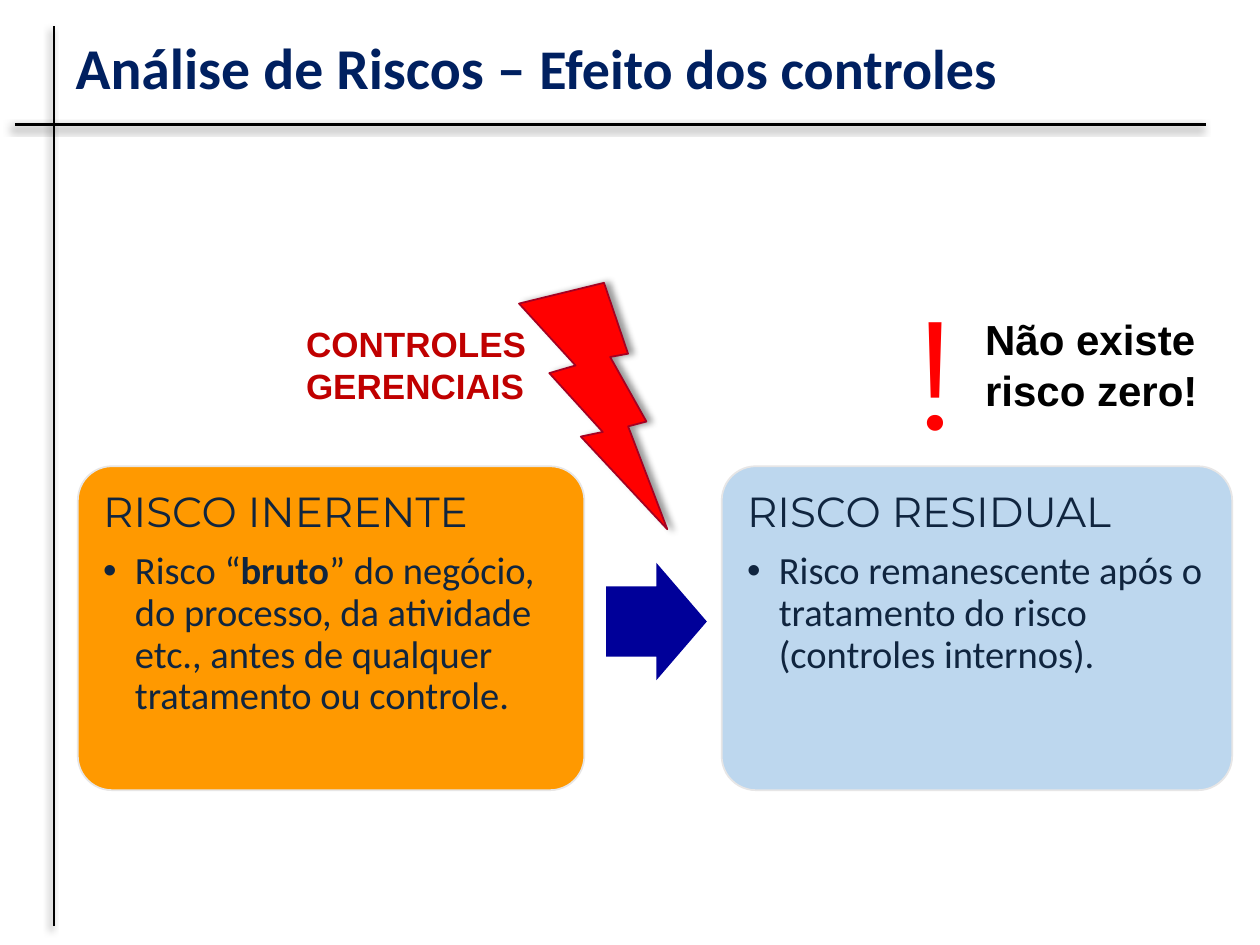
"""Builds the slide on the effect of controls in risk analysis."""
from lxml.etree import SubElement
from pptx import Presentation
from pptx.dml.color import RGBColor
from pptx.enum.shapes import MSO_CONNECTOR, MSO_SHAPE
from pptx.enum.text import MSO_ANCHOR, PP_ALIGN
from pptx.oxml.ns import qn
from pptx.util import Cm, Pt

THEME = {
    "navy": "002060", "ink": "10253F", "black": "000000", "orange": "FF9900",
    "pale": "BDD7EE", "border": "E7E6E6", "arrow": "000099", "red": "FF0000",
    "dark_red": "A50021", "label": "C00000",
    "body": "Calibri", "head": "Montserrat", "note": "Arial",
    "title_size": 33, "subtitle_size": 32, "head_size": 24, "body_size": 22,
    "label_size": 20, "mark_size": 88,
}
TITLE = [("Análise de Riscos – ", "title_size"), ("Efeito dos controles", "subtitle_size")]
RULES = [(1.09, 0.53, 1.09, 18.67), (0.3, 2.51, 24.31, 2.51)]
CARDS = [
    (1.57, 10.21, "orange", "RISCO INERENTE",
     [("Risco “", False), ("bruto", True),
      ("” do negócio, do processo, da atividade etc., antes de qualquer tratamento ou controle.", False)]),
    (14.55, 10.29, "pale", "RISCO RESIDUAL",
     [("Risco remanescente após o tratamento do risco (controles internos).", False)]),
]
CARD_TOP, CARD_HEIGHT, CARD_RADIUS, CARD_INSET = 9.4, 6.53, 0.69, 0.31
NOTES = [
    ((5.92, 6.38, 5.11, 1.96), ["CONTROLES", "GERENCIAIS"], "note", "label_size", "label", True),
    ((18.21, 5.46, 1.83, 4.01), ["!"], "head", "mark_size", "red", False),
    ((19.61, 6.2, 5.79, 2.31), ["Não existe risco zero!"], "note", "head_size", "black", True),
]


def color(name):
    return RGBColor.from_string(THEME[name])


def add_text(p, text, font="body", size="body_size", ink="ink", bold=False):
    r = p.add_run()
    r.text = text
    r.font.name = THEME[font]
    r.font.size = Pt(THEME[size])
    r.font.color.rgb = color(ink)
    r.font.bold = bold


def add_shadow(sp, angle):
    effects = SubElement(sp._element.spPr, qn("a:effectLst"))
    shadow = SubElement(effects, qn("a:outerShdw"), blurRad=str(Pt(4)), dist=str(Pt(3)),
                        dir=str(angle * 60000), algn="tl", rotWithShape="0")
    tint = SubElement(shadow, qn("a:srgbClr"), val=THEME["black"])
    SubElement(tint, qn("a:alpha"), val="40000")


def add_figure(slide, kind, box, fill, line=None):
    sp = slide.shapes.add_shape(kind, *map(Cm, box))
    sp.fill.solid()
    sp.fill.fore_color.rgb = color(fill)
    if line:
        sp.line.color.rgb = color(line)
        sp.line.width = Pt(1)
    else:
        sp.line.fill.background()
    return sp


def add_bullet(p):
    pPr = p._p.get_or_add_pPr()
    pPr.set("marL", str(Cm(0.64)))
    pPr.set("indent", str(-Cm(0.64)))
    SubElement(pPr, qn("a:buFont"), typeface=THEME["note"])
    SubElement(pPr, qn("a:buChar"), char="•")


def add_card(slide, left, width, fill, heading, runs):
    sp = add_figure(slide, MSO_SHAPE.ROUNDED_RECTANGLE,
                    (left, CARD_TOP, width, CARD_HEIGHT), fill, "border")
    sp.shadow.inherit = False
    sp.adjustments[0] = CARD_RADIUS / CARD_HEIGHT
    tf = sp.text_frame
    tf.word_wrap = True
    tf.vertical_anchor = MSO_ANCHOR.TOP
    tf.margin_left = tf.margin_right = tf.margin_top = tf.margin_bottom = Cm(CARD_INSET)
    head, item = tf.paragraphs[0], tf.add_paragraph()
    for p, gap in ((head, 8.4), (item, 3.3)):
        p.alignment = PP_ALIGN.LEFT
        p.line_spacing = 0.9
        p.space_after = Pt(gap)
    add_text(head, heading, font="head", size="head_size")
    add_bullet(item)
    for text, bold in runs:
        add_text(item, text, bold=bold)


def main():
    prs = Presentation()
    prs.slide_width, prs.slide_height = Cm(25.4), Cm(19.05)
    slide = prs.slides.add_slide(prs.slide_layouts[5])

    for ends in RULES:
        rule = slide.shapes.add_connector(MSO_CONNECTOR.STRAIGHT, *map(Cm, ends))
        rule.line.color.rgb = color("black")
        rule.line.width = Pt(1.5)
        add_shadow(rule, 135)

    title = slide.shapes.title
    title.left, title.top, title.width, title.height = map(Cm, (1.27, 0.38, 23.24, 2.11))
    title.text_frame.vertical_anchor = MSO_ANCHOR.MIDDLE
    p = title.text_frame.paragraphs[0]
    p.alignment = PP_ALIGN.LEFT
    p.line_spacing = 0.9
    for text, size in TITLE:
        add_text(p, text, size=size, ink="navy", bold=True)

    for card in CARDS:
        add_card(slide, *card)

    arrow = add_figure(slide, MSO_SHAPE.RIGHT_ARROW, (12.22, 11.35, 2.03, 2.36), "arrow")
    arrow.shadow.inherit = False
    arrow.adjustments[0], arrow.adjustments[1] = 0.6, 0.5

    bolt = add_figure(slide, MSO_SHAPE.LIGHTNING_BOLT, (10.06, 5.74, 3.99, 4.52), "red", "dark_red")
    bolt.rotation = 13.8
    add_shadow(bolt, 0)

    for box, lines, font, size, ink, bold in NOTES:
        tf = slide.shapes.add_textbox(*map(Cm, box)).text_frame
        tf.word_wrap = True
        for i, text in enumerate(lines):
            p = tf.add_paragraph() if i else tf.paragraphs[0]
            add_text(p, text, font=font, size=size, ink=ink, bold=bold)

    prs.save("out.pptx")


if __name__ == "__main__":
    main()
